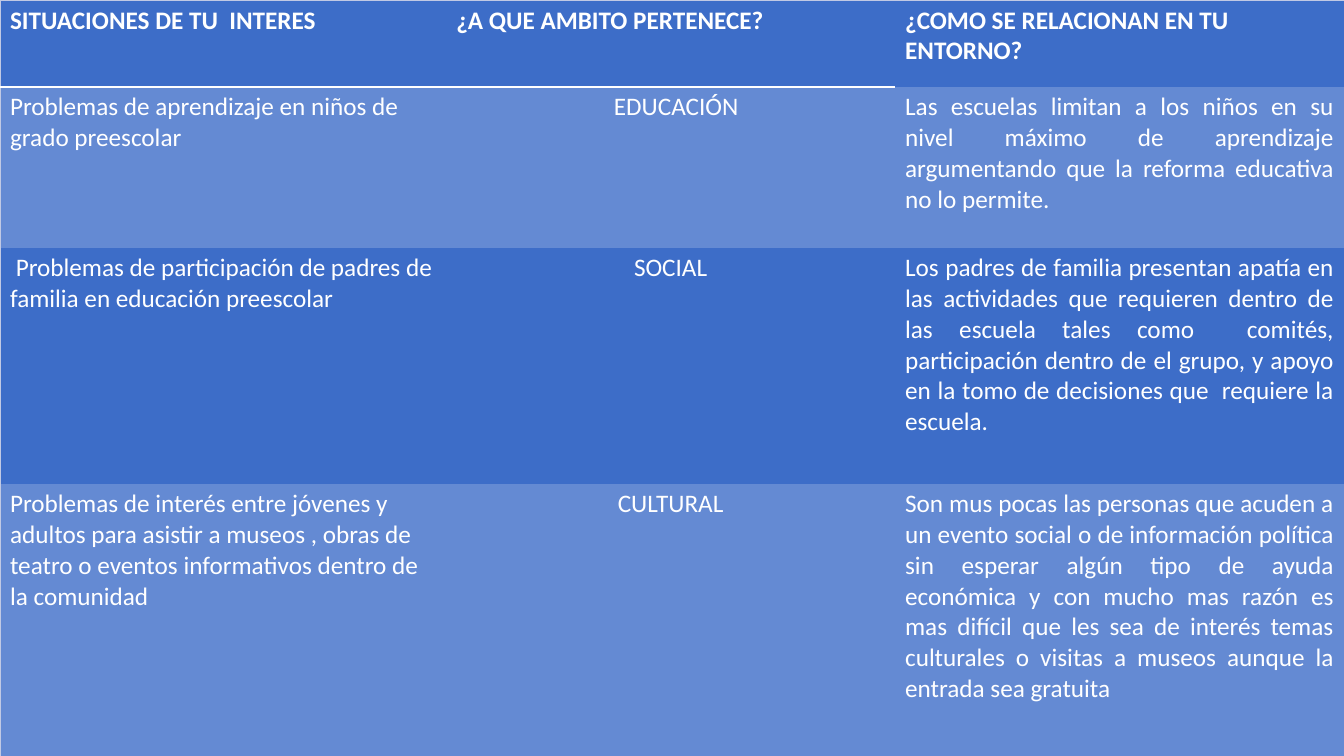
from lxml.etree import SubElement
from pptx import Presentation
from pptx.dml.color import RGBColor
from pptx.enum.text import PP_ALIGN as Align
from pptx.oxml.ns import qn
from pptx.util import Inches, Pt

COLORS = {
    "band_dark": "3D6DC8",
    "band_light": "648AD3",
    "text": "FFFFFF",
    "header_rule": "FFFFFF",
    "frame": "C1C9E4",
}

COLUMN_SHARES = (0.332, 0.334, 0.334)
ROW_SHARES = (0.115, 0.213, 0.312, 0.36)
BODY_ALIGNMENTS = (Align.LEFT, Align.CENTER, Align.JUSTIFY)

HEADINGS = (
    "SITUACIONES DE TU  INTERES",
    "¿A QUE AMBITO PERTENECE?",
    "¿COMO SE RELACIONAN EN TU ENTORNO?",
)
SITUATIONS = (
    (
        "Problemas de aprendizaje en niños de grado preescolar",
        "EDUCACIÓN",
        "Las escuelas limitan a los niños en su nivel máximo de aprendizaje "
        "argumentando que la reforma educativa no lo permite.",
    ),
    (
        " Problemas de participación de padres de familia en educación preescolar",
        "SOCIAL",
        "Los padres de familia presentan apatía en las actividades que requieren "
        "dentro de las escuela tales como  comités, participación dentro de el "
        "grupo, y apoyo en la tomo de decisiones que  requiere la escuela.",
    ),
    (
        "Problemas de interés entre jóvenes y adultos para asistir a museos , "
        "obras de teatro o eventos informativos dentro de la comunidad",
        "CULTURAL",
        "Son mus pocas las personas que acuden a un evento social o de "
        "información política sin esperar algún tipo de ayuda económica y con "
        "mucho mas razón es mas difícil que les sea de interés temas culturales "
        "o visitas a museos aunque la entrada sea gratuita",
    ),
)


class SlideBuilder:
    font = "Calibri"
    size = Pt(18)
    frame_rule = ("frame", 0.5)
    header_rule = ("header_rule", 1.5)

    def __init__(self, deck):
        self.width, self.height = deck.slide_width, deck.slide_height
        self.slide = deck.slides.add_slide(deck.slide_layouts[6])

    def table(self, rows, column_shares, row_shares):
        """Add a table that fills the slide, split by the given shares."""
        grid = self.slide.shapes.add_table(
            len(rows), len(column_shares), 0, 0, self.width, self.height
        ).table
        grid.first_row = grid.horz_banding = False
        for column, share in zip(grid.columns, column_shares):
            column.width = round(self.width * share)
        for row, share in zip(grid.rows, row_shares):
            row.height = round(self.height * share)
        for r, texts in enumerate(rows):
            for c, text in enumerate(texts):
                cell = grid.cell(r, c)
                self.borders(cell, r, c, len(rows), len(texts))
                self.fill(cell, "band_light" if r % 2 else "band_dark")
                alignment = BODY_ALIGNMENTS[c] if r else Align.LEFT
                self.text(cell, text, alignment, bold=r == 0)
        return grid

    def borders(self, cell, r, c, row_count, column_count):
        """Frame the table and rule off the first two headings."""
        ruled = c < column_count - 1
        rules = {
            "a:lnL": self.frame_rule if c == 0 else None,
            "a:lnR": self.frame_rule if c == column_count - 1 else None,
            "a:lnT": self.frame_rule if r == 0
            else self.header_rule if r == 1 and ruled else None,
            "a:lnB": self.frame_rule if r == row_count - 1
            else self.header_rule if r == 0 and ruled else None,
        }
        properties = cell._tc.get_or_add_tcPr()
        for edge, rule in rules.items():
            line = SubElement(properties, qn(edge))
            if rule is None:
                SubElement(line, qn("a:noFill"))
                continue
            color, points = rule
            line.set("w", str(Pt(points)))
            solid = SubElement(line, qn("a:solidFill"))
            SubElement(solid, qn("a:srgbClr")).set("val", COLORS[color])

    def fill(self, cell, color):
        cell.fill.solid()
        cell.fill.fore_color.rgb = RGBColor.from_string(COLORS[color])

    def text(self, cell, text, alignment, bold):
        cell.text_frame.text = text
        paragraph = cell.text_frame.paragraphs[0]
        paragraph.alignment = alignment
        font = paragraph.runs[0].font
        font.name, font.size, font.bold = self.font, self.size, bold
        font.color.rgb = RGBColor.from_string(COLORS["text"])


def main():
    deck = Presentation()
    deck.slide_width, deck.slide_height = Inches(13.33), Inches(7.5)
    builder = SlideBuilder(deck)
    situations = builder.table((HEADINGS, *SITUATIONS), COLUMN_SHARES, ROW_SHARES)
    education = situations.cell(1, 1)
    education.margin_left = Inches(0.21)
    deck.save("out.pptx")


if __name__ == "__main__":
    main()
